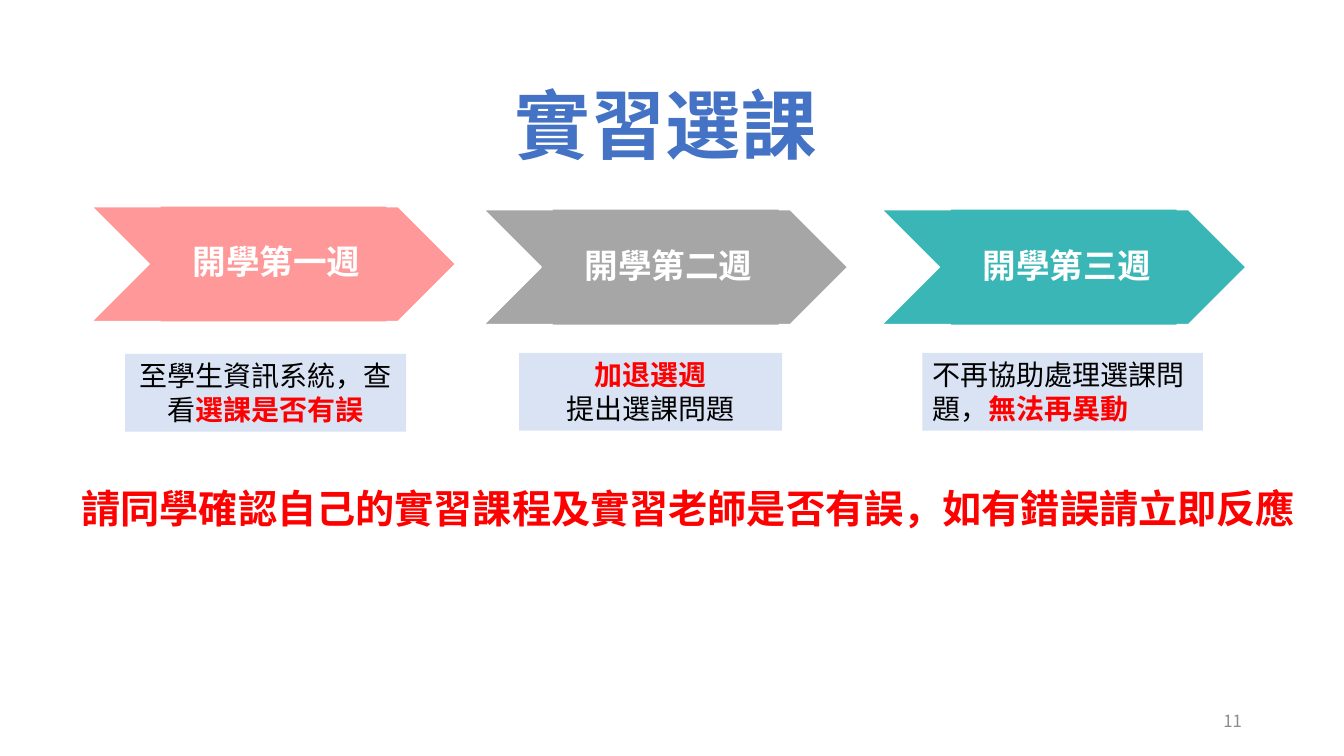
from pptx import Presentation
from pptx.enum.shapes import MSO_SHAPE as Preset
from pptx.enum.text import MSO_ANCHOR as Anchor, PP_ALIGN as Align
from pptx.dml.color import RGBColor
from pptx.oxml.ns import qn
from pptx.util import Pt
from lxml.etree import SubElement

FONT = "Noto Sans CJK SC"
COLORS = {
    "title": "4472C4", "pink": "FF9999", "gray": "A6A6A6", "teal": "3BB6B7",
    "note": "DAE3F3", "alert": "FF0000", "text": "000000", "white": "FFFFFF",
    "number": "8C8C8C",
}
BODY = {"size": Pt(20), "bold": False, "color": "text"}
ALERT = {"size": Pt(20), "bold": True, "color": "alert"}

# Arrow box, label, colour, note box, note alignment, note paragraphs
WEEKS = [
    ((65.5, 147.6), "開學第一週", "pink", (89.3, 252.7, 200.9, 55.7), Align.CENTER,
     [[("至學生資訊系統，查看", BODY), ("選課是否有誤", ALERT)]]),
    ((345.6, 149.8), "開學第二週", "gray", (370.8, 252, 188, 55.7), Align.CENTER,
     [[("加退選週", ALERT)], [("提出選課問題", BODY)]]),
    ((630, 149.8), "開學第三週", "teal", (658.8, 252, 200.5, 55.7), Align.LEFT,
     [[("不再協助處理選課問題，", BODY), ("無法再異動", ALERT)]]),
]
ARROW_WIDTH, ARROW_HEIGHT = 260, 82
LABEL_INSET, LABEL_WIDTH = 49.3, 161.3


def rgb(name):
    return RGBColor.from_string(COLORS[name])


def write(shape, paragraphs, align, anchor=Anchor.TOP, spacing=None):
    frame = shape.text_frame
    frame.word_wrap = True
    frame.vertical_anchor = anchor
    for index, runs in enumerate(paragraphs):
        paragraph = frame.add_paragraph() if index else frame.paragraphs[0]
        paragraph.alignment = align
        paragraph.line_spacing = spacing
        for text, style in runs:
            run = paragraph.add_run()
            run.text = text
            run.font.color.rgb = rgb(style["color"])
            settings = {"name": FONT, "size": style["size"], "bold": style["bold"]}
            for key, value in settings.items():
                setattr(run.font, key, value)
            # East Asian typeface
            SubElement(run.font._element, qn("a:ea"), typeface=FONT)


def add_block(shapes, preset, box, fill, outline=None):
    shape = shapes.add_shape(preset, *map(Pt, box))
    shape.shadow.inherit = False
    shape.fill.solid()
    shape.fill.fore_color.rgb = rgb(fill)
    if outline:
        shape.line.color.rgb = rgb(outline)
        shape.line.width = Pt(1)
    else:
        shape.line.fill.background()
    return shape


def add_text(slide, box, text, style, align, **layout):
    text_box = slide.shapes.add_textbox(*map(Pt, box))
    write(text_box, [[(text, style)]], align, **layout)


def add_arrow(slide, left, top, label, color):
    group = slide.shapes.add_group_shape()
    add_block(group.shapes, Preset.CHEVRON,
              (left, top, ARROW_WIDTH, ARROW_HEIGHT), color, "white")
    band = add_block(group.shapes, Preset.RECTANGLE,
                     (left + LABEL_INSET, top, LABEL_WIDTH, ARROW_HEIGHT), color)
    margins = {"margin_left": 7.2, "margin_top": 3, "margin_right": 3, "margin_bottom": 3}
    for key, value in margins.items():
        setattr(band.text_frame, key, Pt(value))
    style = {"size": Pt(24), "bold": True, "color": "white"}
    write(band, [[(label, style)]], Align.CENTER, Anchor.MIDDLE, 0.9)


def add_note(slide, box, paragraphs, align):
    note = add_block(slide.shapes, Preset.RECTANGLE, box, "note")
    write(note, paragraphs, align)


def build_slide(presentation):
    slide = presentation.slides.add_slide(presentation.slide_layouts[6])
    # Title
    add_text(slide, (181.4, 59.8, 588.2, 55.4), "實習選課",
             {"size": Pt(54), "bold": True, "color": "title"}, Align.CENTER, spacing=0.9)
    # Weekly steps
    for (left, top), label, color, note_box, align, paragraphs in WEEKS:
        add_arrow(slide, left, top, label, color)
        add_note(slide, note_box, paragraphs, align)
    # Reminder
    add_text(slide, (51.1, 342.7, 886.3, 41),
             "請同學確認自己的實習課程及實習老師是否有誤，如有錯誤請立即反應",
             {"size": Pt(28), "bold": True, "color": "alert"}, Align.LEFT)
    # Slide number
    add_text(slide, (678.2, 500.4, 216, 28.8), "11",
             {"size": Pt(12), "bold": False, "color": "number"}, Align.RIGHT,
             anchor=Anchor.MIDDLE)


def main():
    presentation = Presentation()
    presentation.slide_width, presentation.slide_height = Pt(960), Pt(540)
    build_slide(presentation)
    presentation.save("out.pptx")


if __name__ == "__main__":
    main()
